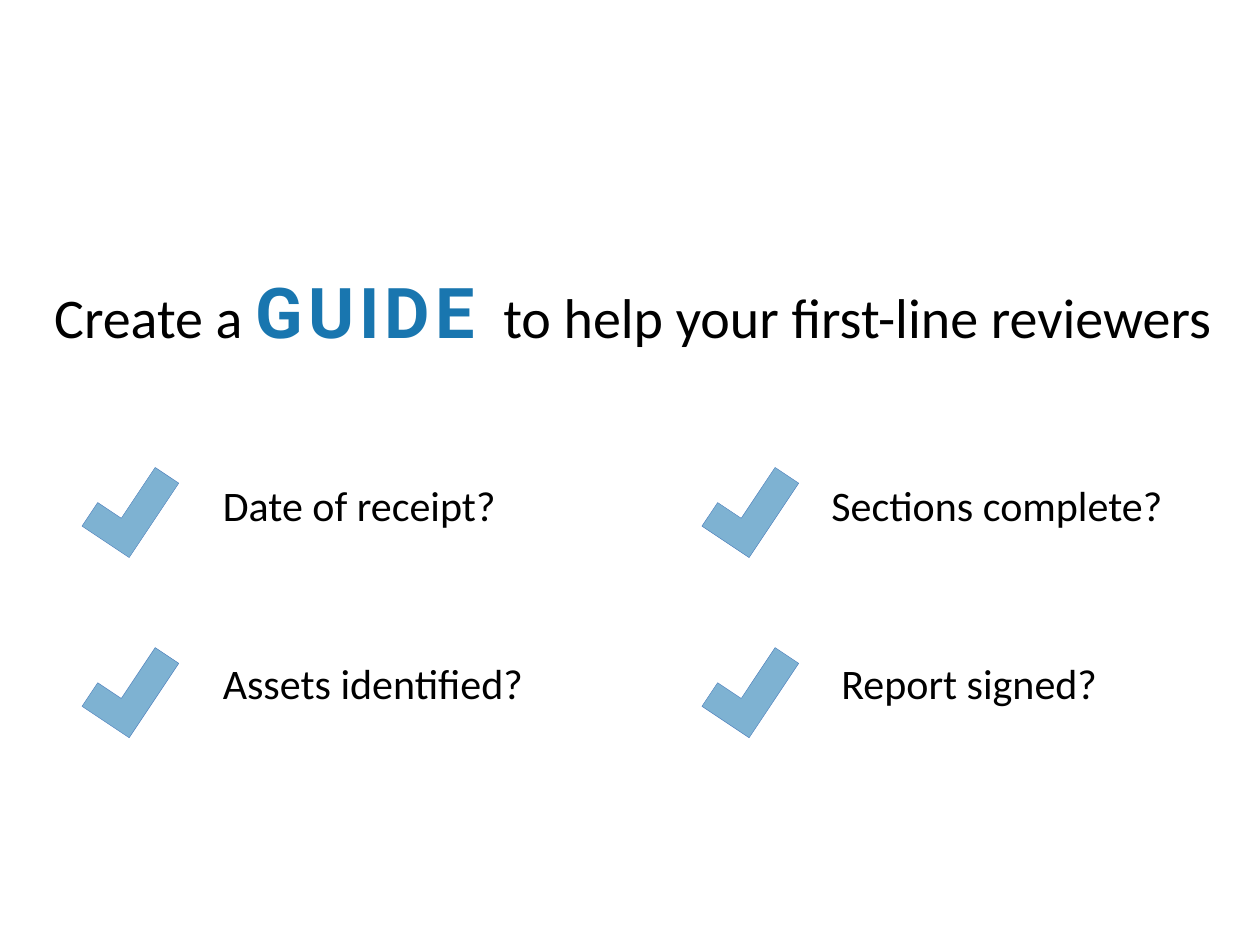
from pptx import Presentation
from pptx.dml.color import RGBColor
from pptx.enum.shapes import MSO_SHAPE as Shape
from pptx.enum.text import MSO_ANCHOR as Anchor, MSO_AUTO_SIZE as AutoSize, PP_ALIGN as Align
from pptx.oxml.ns import qn
from pptx.util import Inches, Pt
from lxml.etree import SubElement

BLACK = RGBColor(0x00, 0x00, 0x00)
BLUE = RGBColor(0x19, 0x76, 0xAF)
OUTLINE = RGBColor(0x4F, 0x81, 0xBD)

PLAIN = {"name": "Calibri", "size": Pt(32), "bold": False}
STRONG = {"name": "Roboto", "size": Pt(40), "bold": True}
ITEM = {"name": "Calibri", "size": Pt(24), "bold": False}

TITLE_ONLY = 5
COLUMNS = (0.68, 5.6)
FIRST_ROW, ROW_STEP = 3.78, 1.43
LABEL_ROWS = (3.76, 5.17)
# column, row, left edge, width, wording
QUESTIONS = (
    (0, 0, 1.67, 2.39, "Date of receipt?"),
    (1, 0, 6.5, 3.12, "Sections complete?"),
    (0, 1, 1.67, 3.17, "Assets identified?"),
    (1, 1, 6.58, 3.12, "Report signed?"),
)


def add_run(paragraph, text, style, color=BLACK, spacing=0):
    """Add a formatted run; spacing is the letter spacing in points."""
    run = paragraph.add_run()
    run.text = text
    for name, value in style.items():
        setattr(run.font, name, value)
    run.font.color.rgb = color
    if spacing:
        run._r.get_or_add_rPr().set("spc", str(spacing * 100))


def fill_title(title):
    place = {"left": 0.33, "top": 2.08, "width": 9.5, "height": 0.77}
    for name, value in place.items():
        setattr(title, name, Inches(value))
    frame = title.text_frame
    frame.word_wrap = True
    frame.auto_size = AutoSize.SHAPE_TO_FIT_TEXT
    frame.vertical_anchor = Anchor.TOP
    heading = frame.paragraphs[0]
    heading.alignment = Align.LEFT
    add_run(heading, "Create a ", PLAIN)
    add_run(heading, "GUIDE ", STRONG, BLUE, spacing=3)
    add_run(heading, "to help your first-line reviewers", PLAIN)


def add_check(slide, column, row):
    """Add a check mark: an L-shaped corner turned on its side."""
    check = slide.shapes.add_shape(
        Shape.CORNER, Inches(COLUMNS[column]), Inches(FIRST_ROW + row * ROW_STEP),
        Inches(0.71), Inches(0.45))
    check.rotation = 303.7
    check.shadow.inherit = False
    check.fill.solid()
    check.fill.fore_color.rgb = BLUE
    color = check.fill._xPr.find(qn("a:solidFill"))[0]
    SubElement(color, qn("a:alpha")).set("val", "56000")
    check.line.color.rgb = OUTLINE
    check.line.width = Pt(0.25)


def add_question(slide, row, left, width, text):
    box = slide.shapes.add_textbox(
        Inches(left), Inches(LABEL_ROWS[row]), Inches(width), Inches(0.5))
    box.text_frame.word_wrap = True
    box.text_frame.auto_size = AutoSize.SHAPE_TO_FIT_TEXT
    add_run(box.text_frame.paragraphs[0], text, ITEM)


def main():
    deck = Presentation()
    deck.slide_width, deck.slide_height = Inches(10), Inches(7.5)
    slide = deck.slides.add_slide(deck.slide_layouts[TITLE_ONLY])
    fill_title(slide.shapes.title)
    for column, row, left, width, text in QUESTIONS:
        add_check(slide, column, row)
        add_question(slide, row, left, width, text)
    deck.save("out.pptx")


if __name__ == "__main__":
    main()
